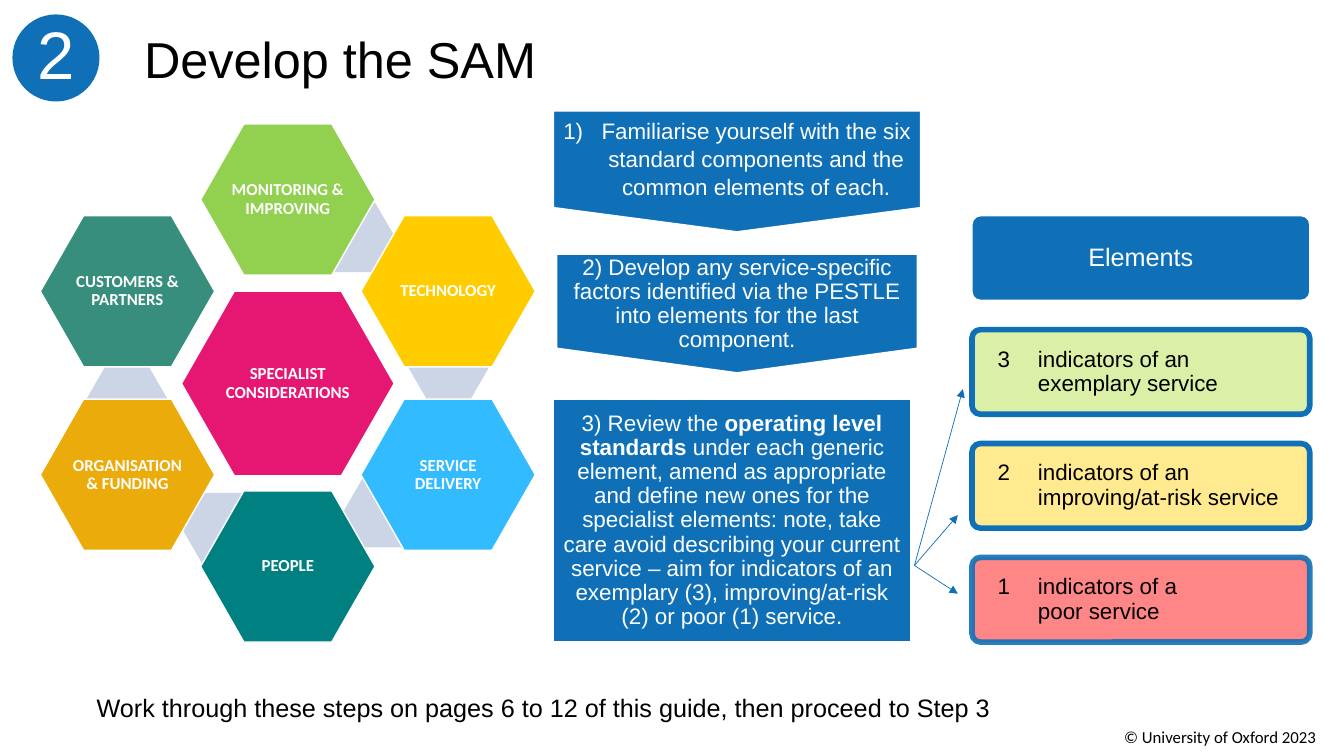
import pptx
import pptx.util
import pptx.dml.color
import pptx.enum.shapes
import pptx.enum.text
import pptx.oxml.ns
from lxml import etree

HUE = {"blue": "0F70B7", "white": "FFFFFF", "black": "000000", "link": "CCD5E6",
       "pink": "E61773", "lime": "92D050", "gold": "FFCC00", "sky": "33BBFF",
       "teal": "008080", "amber": "EBAB0B", "green": "388E7C",
       "good": "D8EE9E", "fair": "FFE885", "poor": "FF7979"}

TITLE = "Develop the SAM"
NOTE = "Work through these steps on pages 6 to 12 of this guide, then proceed to Step 3"
RIGHTS = "© University of Oxford 2023"
CORE = "SPECIALIST CONSIDERATIONS"
RING = [
    ("MONITORING & IMPROVING", "lime", 1, 0, (3.12, 2.01)),
    ("TECHNOLOGY", "gold", 2, 1, (4.05, 3.3)),
    ("SERVICE DELIVERY", "sky", 2, 3, (3.4, 4.74)),
    ("PEOPLE", "teal", 1, 4, (1.8, 4.89)),
    ("ORGANISATION & FUNDING", "amber", 0, 3, (0.86, 3.61)),
    ("CUSTOMERS & PARTNERS", "green", 0, 1, None),
]
HEAD = "Elements"
LEVELS = [
    ("3\tindicators of an\nexemplary service", "good", None),
    ("2\tindicators of an improving/at-risk service", "fair", None),
    ("1\tindicators of a\npoor service", "poor", 90),
]
FIRST = "Familiarise yourself with the six standard components and the common elements of each."
SECOND = ("2) Develop any service-specific factors identified via the PESTLE "
          "into elements for the last component.")
THIRD = ("3) Review the *operating level standards *under each generic element, amend as "
         "appropriate and define new ones for the specialist elements: note, take care avoid "
         "describing your current service – aim for indicators of an exemplary (3), "
         "improving/at-risk (2) or poor (1) service.")
START = (9.07, 5.61)
TIPS = [(9.55, 3.86), (9.5, 5.89), (9.5, 5.11)]

Inches = pptx.util.Inches
Pt = pptx.util.Pt
KIND = pptx.enum.shapes.MSO_SHAPE
ALIGN = pptx.enum.text.PP_ALIGN
ANCHOR = pptx.enum.text.MSO_ANCHOR
qn = pptx.oxml.ns.qn

deck = pptx.Presentation()
deck.slide_width, deck.slide_height = Inches(13.33), Inches(7.5)
slide = deck.slides.add_slide(deck.slide_layouts[6])


def tint(fill, hue, alpha=None):
    fill.solid()
    fill.fore_color.rgb = pptx.dml.color.RGBColor.from_string(HUE[hue])
    if alpha:
        node = fill._xPr.find(qn("a:solidFill"))[0]
        etree.SubElement(node, qn("a:alpha")).set("val", str(alpha * 1000))


def write(shape, text, size=16, font="Arial", hue="white", bold=False, align="CENTER",
          anchor="MIDDLE", inset=(0.05, 0.05, 0.05, 0.05), space=0.9, hang=None,
          number=None, wrap=True):
    frame = shape.text_frame
    frame.word_wrap = wrap
    frame.vertical_anchor = ANCHOR[anchor]
    (frame.margin_left, frame.margin_top,
     frame.margin_right, frame.margin_bottom) = map(Inches, inset)
    para = frame.paragraphs[0]
    para.alignment = ALIGN[align]
    para.line_spacing = space
    props = para._p.get_or_add_pPr()
    if hang:
        props.set("marL", str(Inches(hang[0])))
        props.set("indent", str(Inches(hang[1])))
    if number:
        etree.SubElement(props, qn("a:buFont")).set("typeface", font)
        etree.SubElement(props, qn("a:buAutoNum")).set("type", number)
    for turn, piece in enumerate(text.split("*")):
        for row, line in enumerate(piece.split("\n")):
            if row:
                para.add_line_break()
            run = para.add_run()
            run.text = line
            run.font.size, run.font.name = Pt(size), font
            run.font.bold = bold or turn % 2 == 1
            tint(run.font.fill, hue)


def draw(kind, box, fill, edge="white", width=1, alpha=None, fade=None, adj=None):
    shape = slide.shapes.add_shape(kind, *map(Inches, box))
    shape.shadow.inherit = False
    tint(shape.fill, fill, alpha)
    if edge:
        tint(shape.line.fill, edge, fade)
        shape.line.width = Pt(width)
    else:
        shape.line.fill.background()
    if adj:
        shape.adjustments[0] = adj
    return shape


def label(box, text, **style):
    area = slide.shapes.add_textbox(*map(Inches, box))
    write(area, text, hue="black", align="LEFT", inset=(0.1, 0.05, 0.1, 0.05),
          space=1, **style)


label((11.05, 7.16, 2.29, 0.3), RIGHTS, size=12, font="Calibri", anchor="TOP", wrap=False)

CARD = dict(x=9.64, y=2.14, w=3.35, h=0.84, step=1.13)
card = (CARD["x"], CARD["y"], CARD["w"], CARD["h"])
write(draw(KIND.ROUNDED_RECTANGLE, card, "blue", adj=0.1), HEAD, size=18)
for i, (text, hue, fade) in enumerate(LEVELS, 1):
    card = (CARD["x"], CARD["y"] + i * CARD["step"], CARD["w"], CARD["h"])
    shape = draw(KIND.ROUNDED_RECTANGLE, card, hue, "blue", 4, alpha=90, fade=fade, adj=0.1)
    write(shape, text, hue="black", align="LEFT", hang=(0.6, -0.4),
          inset=(0.03, 0.03, 0.03, 0.03))

badge = draw(KIND.OVAL, (0.13, 0.15, 0.85, 0.85), "blue", "blue")
write(badge, "2", size=48, inset=(0.09, 0.01, 0.09, 0.01))
label((1.33, 0.22, 9.99, 0.71), TITLE, size=36)
label((0.86, 6.82, 11.09, 0.4), NOTE, size=18, anchor="TOP")

flag = dict(anchor="TOP", inset=(0.08, 0.05, 0.08, 0.44))
write(draw(KIND.FLOWCHART_OFFPAGE_CONNECTOR, (5.49, 1.1, 3.64, 1.2), "blue"), FIRST,
      space=1.05, hang=(0.38, -0.38), number="arabicParenR", **flag)
write(draw(KIND.FLOWCHART_OFFPAGE_CONNECTOR, (5.49, 2.49, 3.64, 1.24), "blue", width=5.5),
      SECOND, **flag)
write(draw(KIND.RECTANGLE, (5.49, 3.96, 3.54, 2.41), "blue"), THIRD,
      inset=(0.08, 0.05, 0.08, 0.05))

for tip in TIPS:
    arrow = slide.shapes.add_connector(pptx.enum.shapes.MSO_CONNECTOR.STRAIGHT,
                                       *map(Inches, START + tip))
    tint(arrow.line.fill, "blue")
    arrow.line.width = Pt(0.5)
    etree.SubElement(arrow.line._get_or_add_ln(), qn("a:tailEnd")).set("type", "triangle")
    etree.SubElement(arrow._element.spPr, qn("a:effectLst"))

cell = dict(size=12, font="Calibri", bold=True, inset=(0.02, 0.02, 0.02, 0.02))
write(draw(KIND.HEXAGON, (1.8, 2.89, 2.11, 1.83), "pink", adj=0.286), CORE, **cell)
for text, hue, col, row, link in RING:
    if link:
        draw(KIND.HEXAGON, link + (0.8, 0.69), "link", None, adj=0.289)
    spot = (0.4 + 1.59 * col, 1.23 + 0.91 * row, 1.73, 1.5)
    write(draw(KIND.HEXAGON, spot, hue, adj=0.286), text, **cell)

deck.save("out.pptx")
